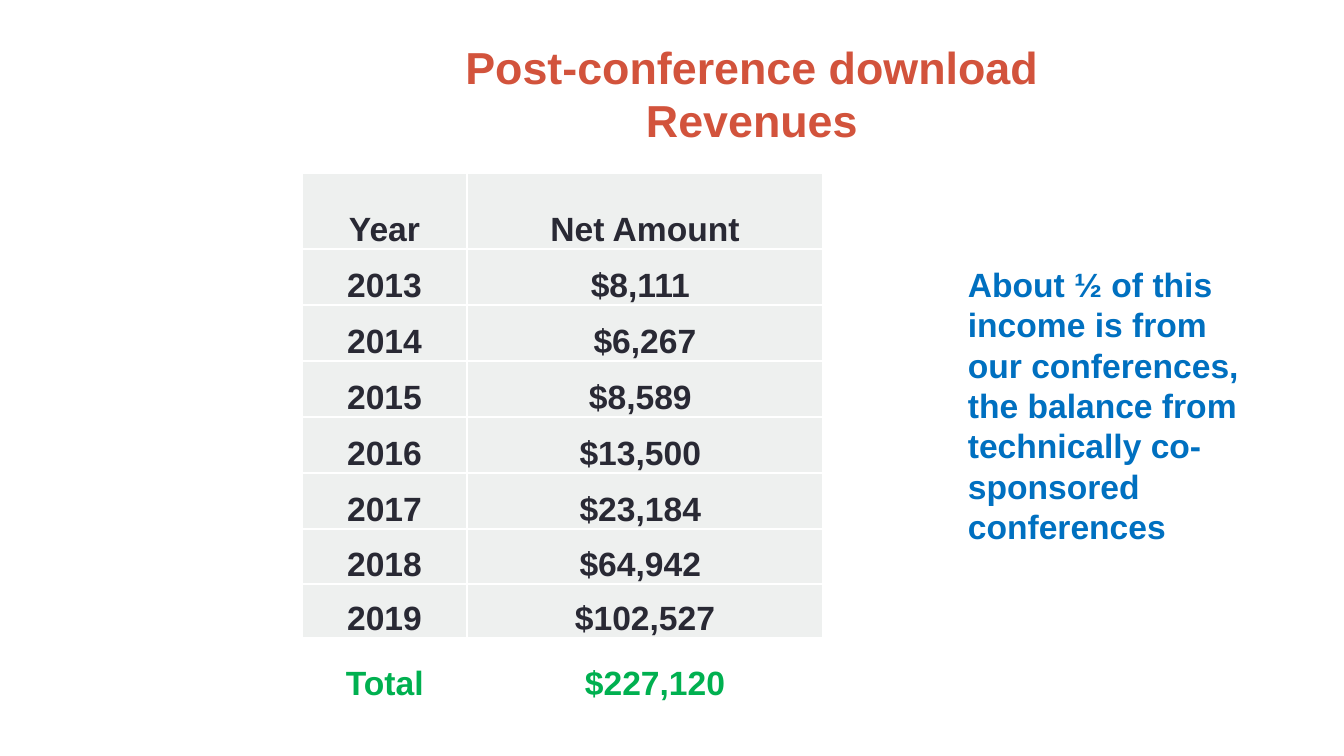
from dataclasses import dataclass

from lxml.etree import SubElement
from pptx import Presentation
from pptx.dml.color import RGBColor
from pptx.enum.text import MSO_ANCHOR, PP_ALIGN
from pptx.oxml.ns import qn
from pptx.util import Emu, Pt

EMU_PER_PX = 914400 / 100.8
FONT = "Arial"
INK, CELL, RULE = "292934", "EEF0EF", "FFFFFF"
RED, GREEN, BLUE = "D2533C", "00B050", "0070C0"

COLUMN_WIDTHS = (165, 356)
ROW_HEIGHTS = (76, 56, 56, 56, 56, 56, 55, 54)
REVENUES = (
    ("Year", "Net Amount"),
    ("2013", "$8,111 "),
    ("2014", "$6,267"),
    ("2015", "$8,589 "),
    ("2016", "$13,500 "),
    ("2017", "$23,184 "),
    ("2018", "$64,942 "),
    ("2019", "$102,527"),
)


@dataclass(frozen=True)
class Label:
    text: str
    left: int
    top: int
    width: int
    height: int
    colour: str
    size: int = 24
    align: PP_ALIGN = PP_ALIGN.LEFT
    anchor: MSO_ANCHOR = MSO_ANCHOR.TOP
    wrap: bool = True
    tab: int = 0


LABELS = (
    Label("Post-conference download Revenues", 378, 30, 748, 126, RED, 32,
          PP_ALIGN.CENTER, MSO_ANCHOR.MIDDLE),
    Label("Total\t$227,120", 336, 657, 403, 50, GREEN, wrap=False, tab=239),
    Label("About ½ of this income is from our conferences, the balance from "
          "technically co-sponsored conferences", 958, 259, 302, 295, BLUE),
)


def px(length: int) -> Emu:
    return Emu(round(length * EMU_PER_PX))


def rgb(colour: str) -> RGBColor:
    return RGBColor.from_string(colour)


def add_span(para, text: str, size: int, colour: str) -> None:
    span = para.add_run()
    span.text = text
    span.font.name = FONT
    span.font.size = Pt(size)
    span.font.bold = True
    span.font.color.rgb = rgb(colour)


def add_tab_stop(para, position: int) -> None:
    tabs = SubElement(para._p.get_or_add_pPr(), qn("a:tabLst"))
    SubElement(tabs, qn("a:tab"), pos=str(px(position)), algn="l")


def add_label(page, label: Label) -> None:
    box = page.shapes.add_textbox(px(label.left), px(label.top),
                                  px(label.width), px(label.height))
    frame = box.text_frame
    frame.word_wrap = label.wrap
    frame.vertical_anchor = label.anchor
    para = frame.paragraphs[0]
    if label.tab:
        add_tab_stop(para, label.tab)
    para.alignment = label.align
    add_span(para, label.text, label.size, label.colour)


def add_borders(cell) -> None:
    properties = cell._tc.get_or_add_tcPr()
    for side in ("lnL", "lnR", "lnT", "lnB"):
        line = SubElement(properties, qn(f"a:{side}"), w=str(Pt(1)))
        fill = SubElement(line, qn("a:solidFill"))
        SubElement(fill, qn("a:srgbClr"), val=RULE)


def fill_cell(cell, text: str) -> None:
    add_borders(cell)
    cell.fill.solid()
    cell.fill.fore_color.rgb = rgb(CELL)
    cell.margin_left = cell.margin_right = cell.margin_top = px(1)
    cell.margin_bottom = px(0)
    cell.vertical_anchor = MSO_ANCHOR.BOTTOM
    para = cell.text_frame.paragraphs[0]
    para.alignment = PP_ALIGN.CENTER
    add_span(para, text, 24, INK)


def add_revenue_table(page, left: int, top: int) -> None:
    table = page.shapes.add_table(
        len(REVENUES), len(COLUMN_WIDTHS), px(left), px(top),
        px(sum(COLUMN_WIDTHS)), px(sum(ROW_HEIGHTS))).table
    for column, width in zip(table.columns, COLUMN_WIDTHS):
        column.width = px(width)
    for row, height, texts in zip(table.rows, ROW_HEIGHTS, REVENUES):
        row.height = px(height)
        for cell, text in zip(row.cells, texts):
            fill_cell(cell, text)


def main() -> None:
    deck = Presentation()
    deck.slide_width, deck.slide_height = px(1344), px(756)
    page = deck.slides.add_slide(deck.slide_layouts[6])
    add_revenue_table(page, 302, 173)
    for label in LABELS:
        add_label(page, label)
    deck.save("out.pptx")


if __name__ == "__main__":
    main()
